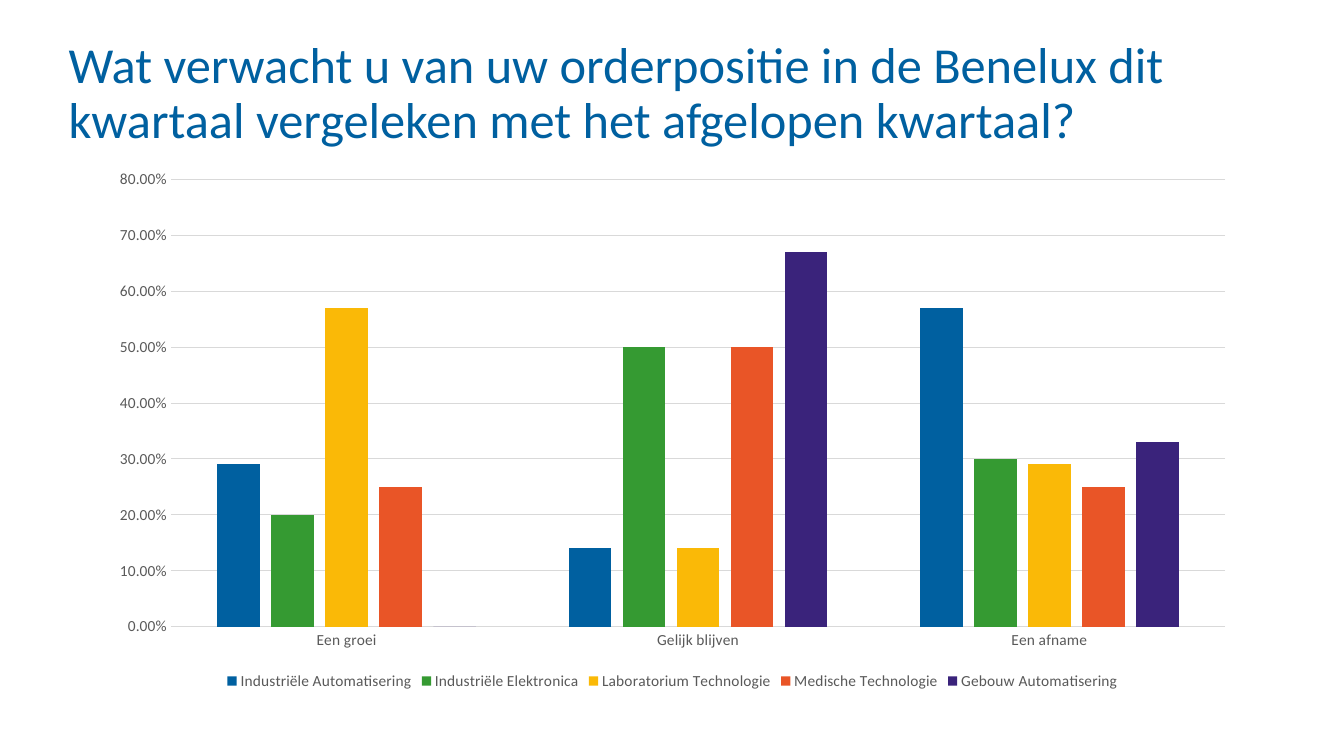
import pptx
import pptx.chart.data
import pptx.dml.color
import pptx.enum.chart
import pptx.enum.text
import pptx.util
from pptx.util import Inches

TITLE = ("Wat verwacht u van uw orderpositie in de Benelux dit kwartaal "
         "vergeleken met het afgelopen kwartaal?")
CATEGORIES = ["Een groei", "Gelijk blijven", "Een afname"]
SERIES = [
    ("Industriële Automatisering", "blue", (0.29, 0.14, 0.57)),
    ("Industriële Elektronica", "green", (0.2, 0.5, 0.3)),
    ("Laboratorium Technologie", "yellow", (0.57, 0.14, 0.29)),
    ("Medische Technologie", "orange", (0.25, 0.5, 0.25)),
    ("Gebouw Automatisering", "purple", (0, 0.67, 0.33)),
]
COLORS = {
    "blue": "0060A0", "green": "359A32", "yellow": "FAB907",
    "orange": "E95527", "purple": "3A237B",
    "label": "595959", "grid": "D9D9D9",
}
FONT = "Calibri"
TITLE_BOX = {"left": 0.68, "top": 0.4, "width": 11.95, "height": 0.76}
CHART_BOX = (0.96, 1.58, 11.42, 5.31)


def color(name):
    return pptx.dml.color.RGBColor.from_string(COLORS[name])


def set_values(target, values):
    for name, value in values.items():
        setattr(target, name, value)


def style_font(font, size, color_name):
    set_values(font, {"name": FONT, "size": pptx.util.Pt(size), "bold": False})
    font.color.rgb = color(color_name)


def style_line(line):
    line.width = pptx.util.Pt(0.75)
    line.color.rgb = color("grid")


def add_title(slide):
    title = slide.shapes.title
    set_values(title, {side: Inches(length) for side, length in TITLE_BOX.items()})
    frame = title.text_frame
    set_values(frame, {
        "text": TITLE,
        "word_wrap": True,
        "auto_size": pptx.enum.text.MSO_AUTO_SIZE.NONE,
        "vertical_anchor": pptx.enum.text.MSO_ANCHOR.TOP,
        "margin_left": 0, "margin_top": 0, "margin_right": 0, "margin_bottom": 0,
    })
    paragraph = frame.paragraphs[0]
    set_values(paragraph, {
        "alignment": pptx.enum.text.PP_ALIGN.LEFT,
        "line_spacing": 0.9,
        "space_before": pptx.util.Pt(0),
    })
    style_font(paragraph.runs[0].font, 36, "blue")


def add_order_chart(slide):
    data = pptx.chart.data.CategoryChartData(number_format="0.00%")
    data.categories = CATEGORIES
    for name, _, values in SERIES:
        data.add_series(name, values)
    chart = slide.shapes.add_chart(
        pptx.enum.chart.XL_CHART_TYPE.COLUMN_CLUSTERED,
        *map(Inches, CHART_BOX), data).chart
    style_font(chart.font, 11, "label")
    set_values(chart, {"has_title": False, "has_legend": True})
    set_values(chart.legend, {
        "position": pptx.enum.chart.XL_LEGEND_POSITION.BOTTOM,
        "include_in_layout": False,
    })
    style_font(chart.legend.font, 11, "label")

    plot = chart.plots[0]
    set_values(plot, {"gap_width": 219, "overlap": -27, "vary_by_categories": False})
    for series, (_, color_name, _) in zip(plot.series, SERIES):
        series.invert_if_negative = False
        series.format.fill.solid()
        series.format.fill.fore_color.rgb = color(color_name)

    for axis in (chart.category_axis, chart.value_axis):
        set_values(axis, {
            "major_tick_mark": pptx.enum.chart.XL_TICK_MARK.NONE,
            "minor_tick_mark": pptx.enum.chart.XL_TICK_MARK.NONE,
        })
        style_font(axis.tick_labels.font, 11, "label")
    style_line(chart.category_axis.format.line)

    value_axis = chart.value_axis
    set_values(value_axis, {
        "minimum_scale": 0, "maximum_scale": 0.8, "major_unit": 0.1,
        "has_major_gridlines": True,
    })
    set_values(value_axis.tick_labels, {
        "number_format": "0.00%", "number_format_is_linked": False,
    })
    value_axis.format.line.fill.background()
    style_line(value_axis.major_gridlines.format.line)


def main():
    presentation = pptx.Presentation()
    set_values(presentation, {"slide_width": Inches(13.33), "slide_height": Inches(7.5)})
    slide = presentation.slides.add_slide(presentation.slide_layouts[5])
    add_title(slide)
    add_order_chart(slide)
    presentation.save("out.pptx")


if __name__ == "__main__":
    main()
